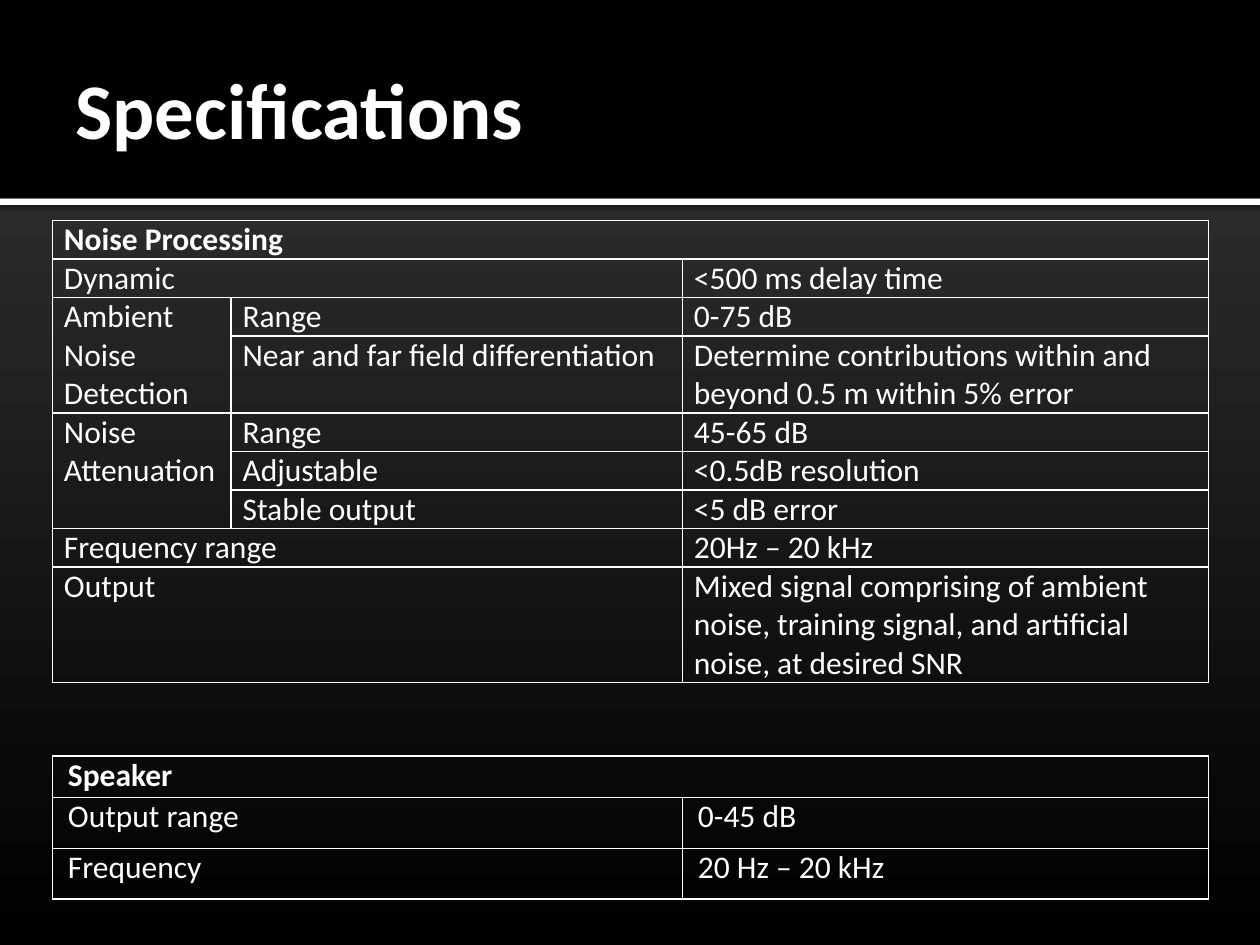
"""Build the specifications slide with its two tables."""
from lxml import etree
from pptx import Presentation
from pptx.dml.color import RGBColor
from pptx.enum.shapes import MSO_SHAPE
from pptx.enum.text import MSO_ANCHOR, PP_ALIGN
from pptx.oxml import parse_xml
from pptx.oxml.ns import qn
from pptx.util import Cm, Pt

RECTANGLE = MSO_SHAPE.RECTANGLE
MIDDLE = MSO_ANCHOR.MIDDLE
LEFT = PP_ALIGN.LEFT
NAMESPACE = "http://schemas.openxmlformats.org/drawingml/2006/main"
TITLE_ONLY = 5
WIDTH, HEIGHT = 25.4, 19.05
BAND_HEIGHT = 4
TABLE_LEFT = 1.06
LABEL_WIDTH, DETAIL_WIDTH, VALUE_WIDTH = 3.6, 9.1, 10.6
LINE_HEIGHT = 0.77

PROCESSING_ROWS = [
    ["Noise Processing", "", ""],
    ["Dynamic", "", "<500 ms delay time"],
    ["Ambient Noise Detection", "Range", "0-75 dB"],
    ["", "Near and far field differentiation",
     "Determine contributions within and beyond 0.5 m within 5% error"],
    ["Noise Attenuation", "Range", "45-65 dB"],
    ["", "Adjustable", "<0.5dB resolution"],
    ["", "Stable output", "<5 dB error"],
    ["Frequency range", "", "20Hz – 20 kHz"],
    ["Output", "", "Mixed signal comprising of ambient noise, training signal, "
                   "and artificial noise, at desired SNR"],
]
PROCESSING_LINES = [1, 1, 1, 2, 1, 1, 1, 1, 3]
PROCESSING_MERGES = [(0, 0, 0, 2), (1, 0, 1, 1), (2, 0, 3, 0),
                     (4, 0, 6, 0), (7, 0, 7, 1), (8, 0, 8, 1)]
SPEAKER_ROWS = [
    ["Speaker", ""],
    ["Output range", "0-45 dB"],
    ["Frequency", "20 Hz – 20 kHz"],
]


def color(hex_string):
    return RGBColor.from_string(hex_string)


class SlideBuilder:
    """Hold the style and the current slide."""

    font = "Calibri"
    ink = "FFFFFF"
    black = "000000"
    gradient = ("373737", "000000")

    def __init__(self, slide):
        self.slide = slide

    def background(self):
        fill = self.slide.background.fill
        fill.gradient()
        fill.gradient_angle = 270
        for stop, hex_string in zip(fill.gradient_stops, self.gradient):
            stop.color.rgb = color(hex_string)

    def bar(self, top, height, fill):
        shape = self.slide.shapes.add_shape(
            RECTANGLE, 0, Cm(top), Cm(WIDTH), Cm(height))
        shape.fill.solid()
        shape.fill.fore_color.rgb = color(fill)
        shape.line.fill.background()
        shape.shadow.inherit = False
        return shape

    def drop_shadow(self, shape):
        effects = shape._element.spPr.find(qn("a:effectLst"))
        effects.append(parse_xml(
            f'<a:outerShdw xmlns:a="{NAMESPACE}" blurRad="{Pt(2.5)}" '
            f'dist="{Pt(0.8)}" dir="5400000"><a:srgbClr val="{self.black}">'
            '<a:alpha val="60000"/></a:srgbClr></a:outerShdw>'))

    def title(self, text):
        title = self.slide.shapes.title
        self.slide.shapes._spTree.append(title._element)
        title.left, title.top = Cm(1.27), Cm(0.43)
        title.width, title.height = Cm(22.86), Cm(3.48)
        frame = title.text_frame
        frame.text = text
        frame.vertical_anchor = MIDDLE
        frame.margin_left, frame.margin_right = Cm(0.25), Cm(0.13)
        self.style(frame, 45, True)

    def style(self, frame, size, bold):
        for paragraph in frame.paragraphs:
            paragraph.alignment = LEFT
            for run in paragraph.runs:
                run.font.name = self.font
                run.font.size = Pt(size)
                run.font.bold = bold
                run.font.color.rgb = color(self.ink)

    def border(self, cell):
        properties = cell._tc.get_or_add_tcPr()
        for index, side in enumerate(("lnL", "lnR", "lnT", "lnB")):
            line = etree.Element(qn(f"a:{side}"), w=str(Pt(1)))
            fill = etree.SubElement(line, qn("a:solidFill"))
            etree.SubElement(fill, qn("a:srgbClr"), val=self.ink)
            properties.insert(index, line)

    def table(self, top, widths, heights, rows, merges, margin):
        table = self.slide.shapes.add_table(
            len(rows), len(widths), Cm(TABLE_LEFT), Cm(top),
            Cm(sum(widths)), Cm(sum(heights))).table
        table.first_row = table.horz_banding = False
        for column, width in zip(table.columns, widths):
            column.width = Cm(width)
        for row, height in zip(table.rows, heights):
            row.height = Cm(height)
        for row_index, texts in enumerate(rows):
            for column_index, text in enumerate(texts):
                cell = table.cell(row_index, column_index)
                cell.margin_left = cell.margin_right = Cm(margin)
                cell.margin_top = cell.margin_bottom = 0
                cell.fill.background()
                self.border(cell)
                cell.text_frame.text = text
                self.style(cell.text_frame, 18, row_index == 0)
        for first_row, first_column, last_row, last_column in merges:
            table.cell(first_row, first_column).merge(
                table.cell(last_row, last_column))


def main():
    presentation = Presentation()
    presentation.slide_width, presentation.slide_height = Cm(WIDTH), Cm(HEIGHT)
    layout = presentation.slide_layouts[TITLE_ONLY]
    builder = SlideBuilder(presentation.slides.add_slide(layout))
    builder.background()
    builder.drop_shadow(builder.bar(BAND_HEIGHT, 0.13, builder.ink))
    builder.bar(0, BAND_HEIGHT, builder.black)
    builder.title("Specifications")
    builder.table(4.45, [LABEL_WIDTH, DETAIL_WIDTH, VALUE_WIDTH],
                  [LINE_HEIGHT * lines for lines in PROCESSING_LINES],
                  PROCESSING_ROWS, PROCESSING_MERGES, 0.23)
    builder.table(15.24, [LABEL_WIDTH + DETAIL_WIDTH, VALUE_WIDTH],
                  [0.84, 1.02, 1.02], SPEAKER_ROWS, [(0, 0, 0, 1)], 0.31)
    presentation.save("out.pptx")


if __name__ == "__main__":
    main()
